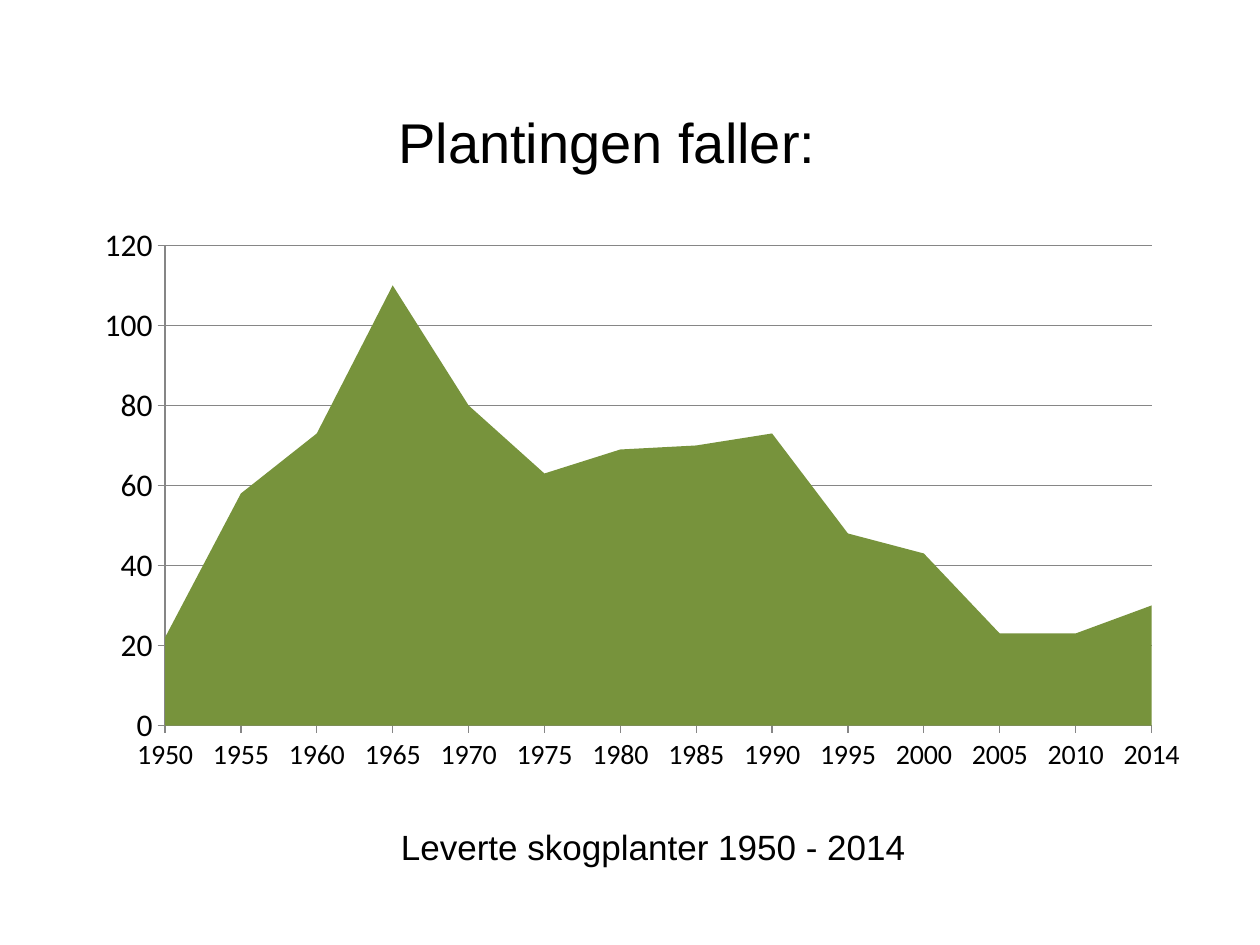
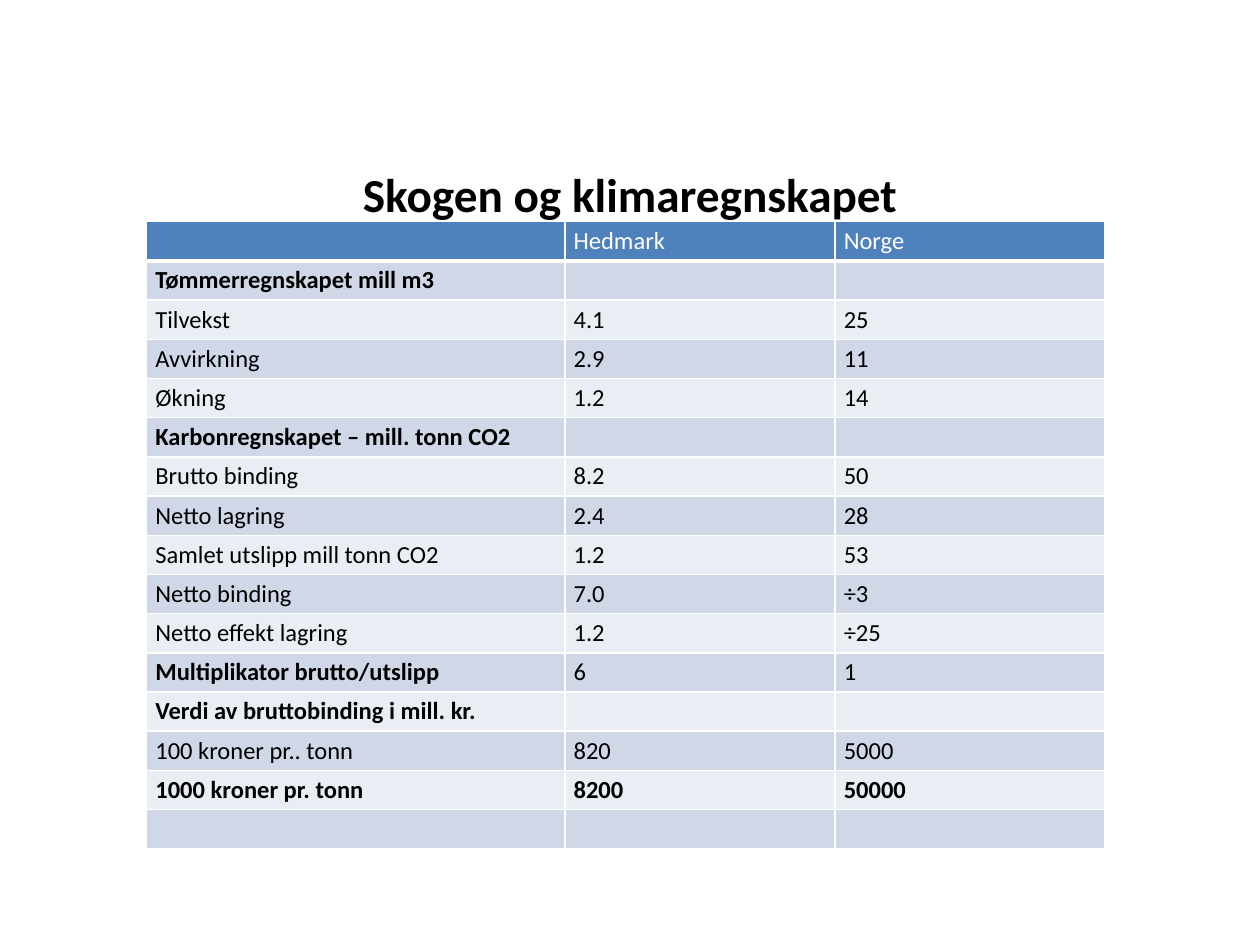
from dataclasses import dataclass
from typing import NamedTuple

from lxml import etree
from pptx import Presentation
from pptx.chart.data import CategoryChartData
from pptx.dml.color import RGBColor
from pptx.enum.chart import XL_CHART_TYPE, XL_TICK_MARK
from pptx.enum.text import MSO_ANCHOR, MSO_AUTO_SIZE, PP_ALIGN
from pptx.oxml import parse_xml
from pptx.oxml.ns import nsdecls, qn
from pptx.util import Pt

AREA = XL_CHART_TYPE.AREA
TICK_OUT = XL_TICK_MARK.OUTSIDE
MIDDLE = MSO_ANCHOR.MIDDLE
NO_FIT = MSO_AUTO_SIZE.NONE
CENTER = PP_ALIGN.CENTER

# Shared look
ARIAL, CALIBRI = "Arial", "Calibri"
BLACK, WHITE = "000000", "FFFFFF"
GREEN, AXIS_GREY = "77933C", "868686"
HEADER_BLUE, BANDS = "4F81BD", ("E9EDF4", "D0D8E8")
TITLE_ONLY = 5


@dataclass
class Box:
    left: float
    top: float
    width: float
    height: float

    def lengths(self) -> list:
        return [Pt(v) for v in (self.left, self.top, self.width, self.height)]


@dataclass
class Title:
    text: str
    box: Box
    size: float
    font: str
    bold: bool = False
    bottom_inset: float = 3.6


class Row(NamedTuple):
    label: str
    hedmark: str = ""
    norge: str = ""
    bold_label: bool = False
    bold_values: bool = False


PLANTS = {
    "1950": 22, "1955": 58, "1960": 73, "1965": 110, "1970": 80,
    "1975": 63, "1980": 69, "1985": 70, "1990": 73, "1995": 48,
    "2000": 43, "2005": 23, "2010": 23, "2014": 30,
}

ROWS = [
    Row("", "Hedmark", "Norge"),
    Row("Tømmerregnskapet mill m3", bold_label=True),
    Row("Tilvekst", "4.1", "25"),
    Row("Avvirkning", "2.9", "11"),
    Row("Økning", "1.2", "14"),
    Row("Karbonregnskapet – mill. tonn CO2", bold_label=True),
    Row("Brutto binding", "8.2", "50"),
    Row("Netto lagring", "2.4", "28"),
    Row("Samlet utslipp mill tonn CO2", "1.2", "53"),
    Row("Netto binding", "7.0", "÷3"),
    Row("Netto effekt lagring", "1.2", "÷25"),
    Row("Multiplikator brutto/utslipp", "6", "1", bold_label=True),
    Row("Verdi av bruttobinding i mill. kr.", bold_label=True),
    Row("100 kroner pr.. tonn", "820", "5000"),
    Row("1000 kroner pr. tonn", "8200", "50000", True, True),
    Row(""),
]
COLUMN_WIDTHS = (239, 154.4, 154.4)
ROW_HEIGHT = 22.18


def rgb(color: str) -> RGBColor:
    return RGBColor.from_string(color)


def style_font(font, name: str, size: float, color: str = BLACK, bold: bool = False) -> None:
    font.name = name
    font.size = Pt(size)
    font.bold = bold
    font.color.rgb = rgb(color)


def add_titled_slide(prs, title: Title):
    s = prs.slides.add_slide(prs.slide_layouts[TITLE_ONLY])
    sp = s.shapes.title
    sp.left, sp.top, sp.width, sp.height = title.box.lengths()
    tf = sp.text_frame
    tf.text = title.text
    tf.auto_size = NO_FIT
    tf.vertical_anchor = MIDDLE
    tf.margin_bottom = Pt(title.bottom_inset)
    p = tf.paragraphs[0]
    p.alignment = CENTER
    style_font(p.runs[0].font, title.font, title.size, bold=title.bold)
    return s


def add_caption(s, text: str, box: Box) -> None:
    tf = s.shapes.add_textbox(*box.lengths()).text_frame
    tf.word_wrap = False
    tf.text = text
    style_font(tf.paragraphs[0].runs[0].font, ARIAL, 20)


def set_plot_layout(chart, x: float, y: float, w: float, h: float) -> None:
    plot_area = chart._chartSpace.chart.plotArea
    for old in plot_area.findall(qn("c:layout")):
        plot_area.remove(old)
    sizes = "".join(f'<c:{tag} val="{val}"/>' for tag, val in zip("xywh", (x, y, w, h)))
    plot_area.insert(0, parse_xml(
        f'<c:layout {nsdecls("c")}><c:manualLayout><c:layoutTarget val="inner"/>'
        f'<c:xMode val="edge"/><c:yMode val="edge"/>{sizes}</c:manualLayout></c:layout>'))


def add_area_chart(s, box: Box) -> None:
    data = CategoryChartData()
    data.categories = list(PLANTS)
    data.add_series("Series 1", list(PLANTS.values()))
    chart = s.shapes.add_chart(AREA, *box.lengths(), data).chart
    chart.has_legend = False
    chart.has_title = False
    style_font(chart.font, CALIBRI, 18)
    set_plot_layout(chart, 0.09, 0.04, 0.87, 0.77)

    plot = chart.plots[0]
    plot.vary_by_categories = False
    fill = plot.series[0].format.fill
    fill.solid()
    fill.fore_color.rgb = rgb(GREEN)

    cat_axis, val_axis = chart.category_axis, chart.value_axis
    cat_axis.has_major_gridlines = False
    val_axis.has_major_gridlines = True
    val_axis.minimum_scale, val_axis.maximum_scale, val_axis.major_unit = 0, 120, 20
    for axis, size in ((cat_axis, 16), (val_axis, 18)):
        axis.major_tick_mark = TICK_OUT
        style_font(axis.tick_labels.font, CALIBRI, size)
    for part in (cat_axis, val_axis, val_axis.major_gridlines):
        part.format.line.color.rgb = rgb(AXIS_GREY)
        part.format.line.width = Pt(0.75)
    # The area starts on the value axis itself
    for cross in chart._chartSpace.iter(qn("c:crossBetween")):
        cross.set("val", "midCat")


def set_borders(cell, bottom: float) -> None:
    tc_pr = cell._tc.get_or_add_tcPr()
    for i, (side, width) in enumerate((("L", 1), ("R", 1), ("T", 1), ("B", bottom))):
        tc_pr.insert(i, parse_xml(
            f'<a:ln{side} {nsdecls("a")} w="{Pt(width)}"><a:solidFill>'
            f'<a:srgbClr val="{WHITE}"/></a:solidFill></a:ln{side}>'))


def fill_cell(cell, text: str, fill: str, color: str, bold: bool, bottom: float) -> None:
    cell.fill.solid()
    cell.fill.fore_color.rgb = rgb(fill)
    cell.margin_left = cell.margin_right = Pt(5)
    cell.margin_top = cell.margin_bottom = Pt(2.67)
    set_borders(cell, bottom)
    p = cell.text_frame.paragraphs[0]
    if text:
        p.text = text
        style_font(p.runs[0].font, CALIBRI, 14, color, bold)
    else:
        # Keeps empty rows as low as the others
        etree.SubElement(p._p, qn("a:endParaRPr"), sz="1400")


def add_accounts_table(s, left: float, top: float) -> None:
    box = Box(left, top, sum(COLUMN_WIDTHS), ROW_HEIGHT * len(ROWS))
    table = s.shapes.add_table(len(ROWS), len(COLUMN_WIDTHS), *box.lengths()).table
    table.first_row = table.horz_banding = False
    for column, width in zip(table.columns, COLUMN_WIDTHS):
        column.width = Pt(width)
    for i, row in enumerate(ROWS):
        table.rows[i].height = Pt(ROW_HEIGHT)
        header = i == 0
        fill = HEADER_BLUE if header else BANDS[i % 2]
        for j, text in enumerate((row.label, row.hedmark, row.norge)):
            bold = row.bold_values if j else row.bold_label
            fill_cell(table.cell(i, j), text, fill, WHITE if header else BLACK,
                      bold, 3 if header else 1)


def main() -> None:
    prs = Presentation()
    prs.slide_width, prs.slide_height = Pt(720), Pt(540)

    # Planting over time
    s = add_titled_slide(prs, Title("Plantingen faller:", Box(23, 55.5, 648, 70.5),
                                    32, ARIAL, bottom_inset=24))
    add_area_chart(s, Box(36, 126, 648, 356.4))
    add_caption(s, "Leverte skogplanter 1950 - 2014", Box(222, 468, 305, 31.5))

    # Forest and climate accounts
    s = add_titled_slide(prs, Title("Skogen og klimaregnskapet", Box(49.7, 89.3, 620.6, 42.5),
                                    27, CALIBRI, bold=True))
    add_accounts_table(s, 83.8, 126.7)

    prs.save("out.pptx")


if __name__ == "__main__":
    main()
